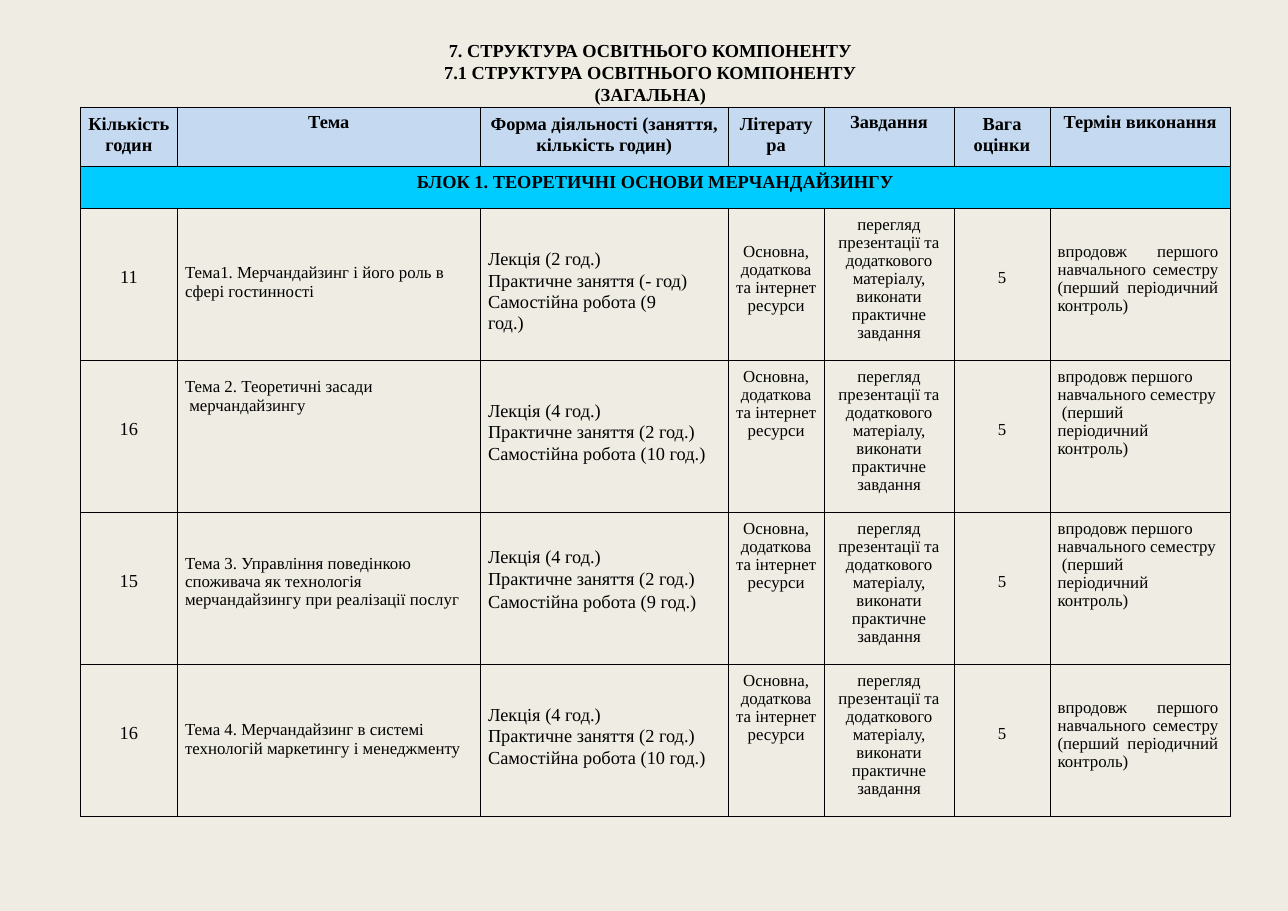
import pptx
import pptx.dml.color
import pptx.enum.text
import pptx.oxml.ns
import pptx.util
import lxml.etree

Inches = pptx.util.Inches
Pt = pptx.util.Pt
LEFT = pptx.enum.text.PP_ALIGN.LEFT
CENTER = pptx.enum.text.PP_ALIGN.CENTER
JUSTIFY = pptx.enum.text.PP_ALIGN.JUSTIFY

THEME = {
    "font": "Times New Roman",
    "ink": "000000",
    "page": "EFEDE3",
    "header": "C5D9F0",
    "block": "00CCFF",
    "large": 12,
    "small": 11,
    "border": 0.5,
}
WIDTH, HEIGHT = 11.69, 8.27
COLUMNS = [0.88, 2.75, 2.25, 0.87, 1.18, 0.87, 1.64]
ROWS = [0.54, 0.38] + [1.38] * 4
TIGHT = 0.96


def write(frame, text, size, bold, align, spacing):
    frame.word_wrap = True
    frame.text = text
    for para in frame.paragraphs:
        para.alignment = align
        para.line_spacing = spacing
        para.font.name = THEME["font"]
        para.font.size = Pt(size)
        para.font.bold = bold
        para.font.color.rgb = pptx.dml.color.RGBColor.from_string(THEME["ink"])


def outline(cell):
    properties = cell._tc.get_or_add_tcPr()
    for side in ("a:lnL", "a:lnR", "a:lnT", "a:lnB"):
        line = lxml.etree.SubElement(properties, pptx.oxml.ns.qn(side), w=str(Pt(THEME["border"])))
        fill = lxml.etree.SubElement(line, pptx.oxml.ns.qn("a:solidFill"))
        lxml.etree.SubElement(fill, pptx.oxml.ns.qn("a:srgbClr"), val=THEME["ink"])


deck = pptx.Presentation()
deck.slide_width, deck.slide_height = Inches(WIDTH), Inches(HEIGHT)
page = deck.slides.add_slide(deck.slide_layouts[6])
page.background.fill.solid()
page.background.fill.fore_color.rgb = pptx.dml.color.RGBColor.from_string(THEME["page"])

title = page.shapes.add_textbox(
    Inches(WIDTH * 0.3), Inches(HEIGHT * 0.044), Inches(WIDTH * 0.41), Inches(HEIGHT * 0.05)
)
frame = title.text_frame
frame.margin_left = frame.margin_top = frame.margin_right = frame.margin_bottom = 0
write(
    frame,
    "7. СТРУКТУРА ОСВІТНЬОГО КОМПОНЕНТУ\n7.1 СТРУКТУРА ОСВІТНЬОГО КОМПОНЕНТУ (ЗАГАЛЬНА)",
    THEME["large"], True, CENTER, Pt(14.1),
)

headings = [
    ("Кількість\vгодин", 0.07),
    ("Тема", 0.05),
    ("Форма діяльності (заняття,\vкількість годин)", 0.07),
    ("Літерату\vра", 0.07),
    ("Завдання", 0.05),
    ("Вага\vоцінки", 0.07),
    ("Термін виконання", 0.05),
]
block = "БЛОК 1. ТЕОРЕТИЧНІ ОСНОВИ МЕРЧАНДАЙЗИНГУ"
sources = "Основна,\vдодаткова\vта інтернет\vресурси"
task = "перегляд\vпрезентації та\vдодаткового\vматеріалу,\vвиконати\vпрактичне\vзавдання"
justified_term = (
    "впродовж першого навчального семестру (перший періодичний контроль)", 0.32, JUSTIFY
)
left_term = (
    "впродовж першого\vнавчального семестру\v (перший\vперіодичний\vконтроль)", 0.07, LEFT
)
topics = [
    ("11", ("Тема1. Мерчандайзинг і його роль в\vсфері гостинності", 0.49, Pt(12.8)),
     ("2", "-", "год)", "9\vгод.)", 0.37, Pt(13.8)), 0.32, justified_term),
    ("16", ("Тема 2. Теоретичні засади\v мерчандайзингу", 0.15, Pt(12.6)),
     ("4", "2", "год.)", "10 год.)", 0.36, Pt(14)), 0.07, left_term),
    ("15", ("Тема 3. Управління поведінкою\vспоживача як технологія\v"
            "мерчандайзингу при реалізації послуг", 0.39, TIGHT),
     ("4", "2", "год.)", "9 год.)", 0.3, Pt(14.6)), 0.07, left_term),
    ("16", ("Тема 4. Мерчандайзинг в системі\vтехнологій маркетингу і менеджменту", 0.5, Pt(12.7)),
     ("4", "2", "год.)", "10 год.)", 0.36, Pt(14)), 0.07, justified_term),
]

large, small = THEME["large"], THEME["small"]
grid = [
    [(text, top, large, True, CENTER, 1.0) for text, top in headings],
    [(text, 0.05, large, True, CENTER, 1.0) for text in [block] + [""] * 6],
]
for hours, (topic, topic_top, topic_spacing), form, sources_top, term in topics:
    lecture, practice, unit, homework, form_top, form_spacing = form
    activity = (
        f"Лекція ({lecture} год.)\n"
        f"Практичне заняття ({practice} {unit}\vСамостійна робота ({homework}"
    )
    deadline, deadline_top, deadline_align = term
    grid.append([
        (hours, 0.54, large, False, CENTER, 1.0),
        (topic, topic_top, small, False, LEFT, topic_spacing),
        (activity, form_top, large, False, LEFT, form_spacing),
        (sources, sources_top, small, False, CENTER, TIGHT),
        (task, 0.07, small, False, CENTER, TIGHT),
        ("5", 0.55, small, False, CENTER, 1.0),
        (deadline, deadline_top, small, False, deadline_align, TIGHT),
    ])

table = page.shapes.add_table(
    len(ROWS), len(COLUMNS), Inches(0.73), Inches(0.97), Inches(sum(COLUMNS)), Inches(sum(ROWS))
).table
table.first_row = table.horz_banding = False
for column, width in zip(table.columns, COLUMNS):
    column.width = Inches(width)
for row, height in zip(table.rows, ROWS):
    row.height = Inches(height)

fills = [THEME["header"], THEME["block"]] + [None] * len(topics)
for row, (entries, color) in enumerate(zip(grid, fills)):
    for column, (text, top, size, bold, align, spacing) in enumerate(entries):
        cell = table.cell(row, column)
        cell.margin_left = Inches(0 if align == CENTER else 0.07)
        cell.margin_right = Inches(0.11 if align == JUSTIFY else 0)
        cell.margin_top, cell.margin_bottom = Inches(top), 0
        write(cell.text_frame, text, size, bold, align, spacing)
        outline(cell)
        if color:
            cell.fill.solid()
            cell.fill.fore_color.rgb = pptx.dml.color.RGBColor.from_string(color)
        else:
            cell.fill.background()
table.cell(1, 0).merge(table.cell(1, len(COLUMNS) - 1))

deck.save("out.pptx")
